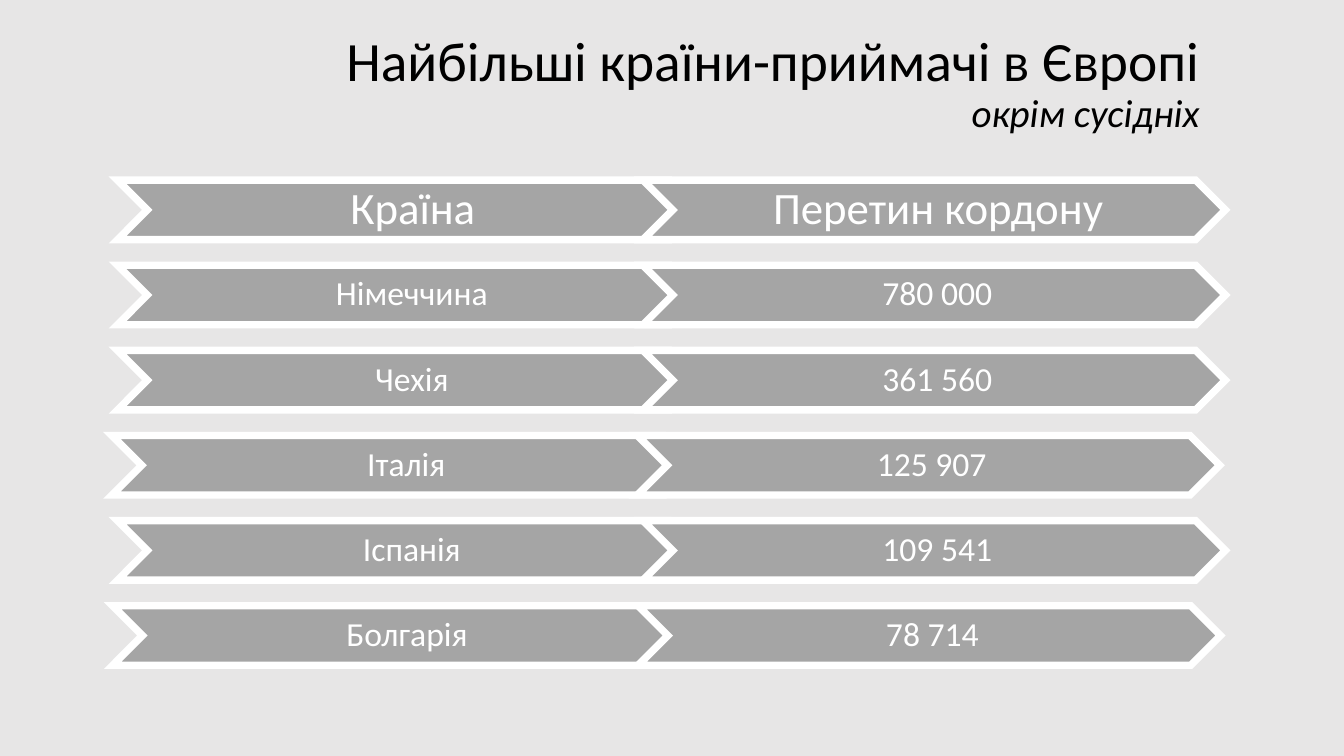
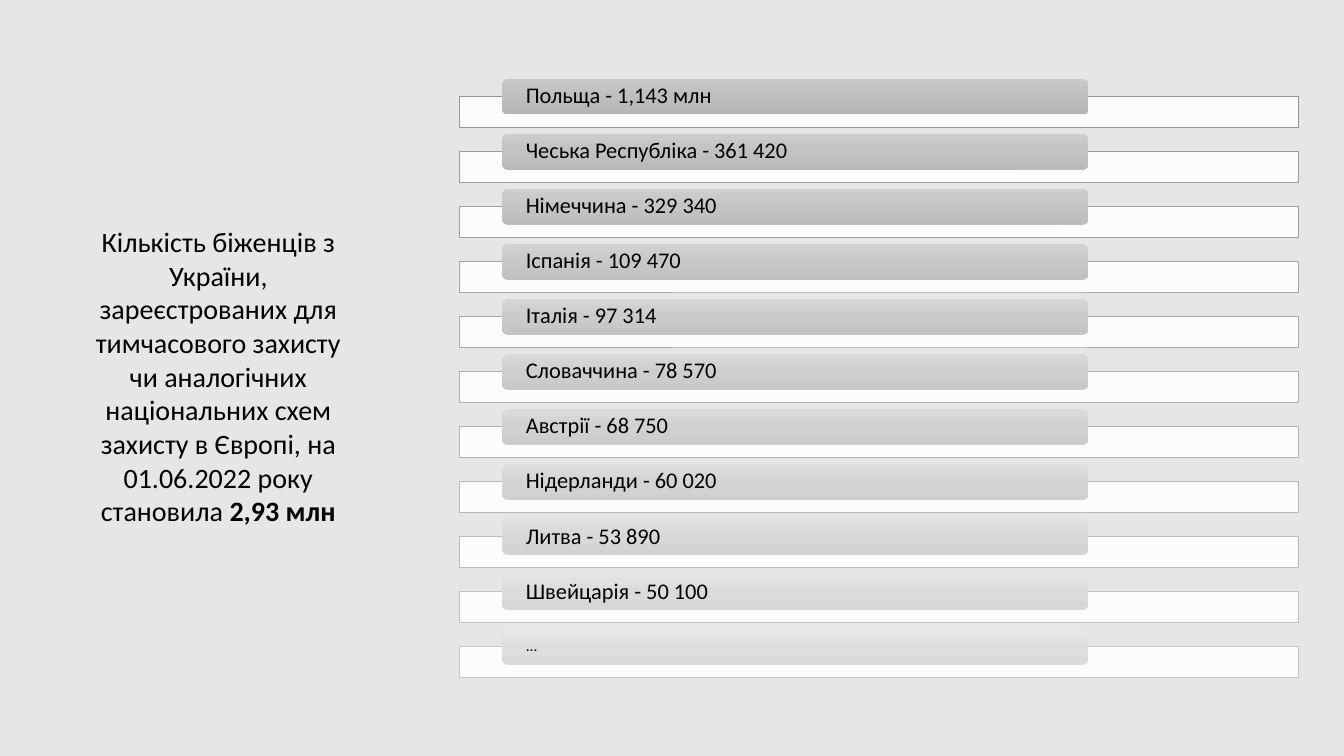
import copy

import pptx
import pptx.util
import pptx.dml.color
import pptx.enum.shapes
import pptx.enum.text
import pptx.oxml
import pptx.oxml.ns

Pt = pptx.util.Pt
RGBColor = pptx.dml.color.RGBColor
SHAPE = pptx.enum.shapes.MSO_SHAPE
ALIGN = pptx.enum.text.PP_ALIGN
ANCHOR = pptx.enum.text.MSO_ANCHOR
AUTO_SIZE = pptx.enum.text.MSO_AUTO_SIZE
qn = pptx.oxml.ns.qn

FONT = "Calibri"
BACKGROUND = RGBColor(0xE7, 0xE6, 0xE6)
BLACK = RGBColor(0, 0, 0)
WHITE = RGBColor(0xFF, 0xFF, 0xFF)
CHEVRON_GREY = RGBColor(0xA5, 0xA5, 0xA5)

TITLE = "Найбільші країни-приймачі в Європі"
SUBTITLE = "окрім сусідніх"

# country, border crossings, left edge, text size
CROSSINGS = [
    ("Країна", "Перетин кордону", 84, 32),
    ("Німеччина", "780 000", 84, 24),
    ("Чехія", "361 560", 84, 24),
    ("Італія", "125 907", 80, 24),
    ("Іспанія", "109 541", 84, 24),
    ("Болгарія", "78 714", 80.5, 24),
]
CHEVRON = {"top": 128.7, "width": 416, "height": 42.5, "step_x": 375.3, "step_y": 60.8}

SUMMARY = (
    "Кількість біженців з України, зареєстрованих для тимчасового захисту "
    "чи аналогічних національних схем захисту в Європі, на 01.06.2022 року становила "
)
SUMMARY_TOTAL = "2,93 млн"
REGISTERED = [
    "Польща - 1,143 млн",
    "Чеська Республіка - 361 420",
    "Німеччина - 329 340",
    "Іспанія - 109 470",
    "Італія - 97 314",
    "Словаччина - 78 570",
    "Австрії - 68 750",
    "Нідерланди - 60 020",
    "Литва - 53 890",
    "Швейцарія - 50 100",
    "...",
]
BAR_BOX = (328.3, 68.9, 599, 21.8)
LABEL_BOX = (358.6, 56.3, 419, 25.5)
ROW_STEP = 39.3
# grey level in the first and the last row
BAR_LINE = (150, 198)
LABEL_GRADIENT = [(0, 201, 231), (0.5, 190, 222), (1, 181, 218)]


def format_object(target, **values):
    for name, value in values.items():
        setattr(target, name, value)


def add_run(paragraph, text, size, color=BLACK, **values):
    run = paragraph.add_run()
    run.text = text
    format_object(run.font, name=FONT, size=Pt(size), **values)
    run.font.color.rgb = color


def add_plain_shape(slide, preset, box):
    shape = slide.shapes.add_shape(preset, *map(Pt, box))
    shape.shadow.inherit = False
    return shape


def label_shape(shape, text, size, color, align, margins):
    """Put one vertically centred line of text into a shape."""
    left, top, right, bottom = map(Pt, margins)
    format_object(shape.text_frame, word_wrap=True, vertical_anchor=ANCHOR.MIDDLE,
                  margin_left=left, margin_top=top, margin_right=right, margin_bottom=bottom)
    paragraph = shape.text_frame.paragraphs[0]
    format_object(paragraph, alignment=align, line_spacing=0.9)
    add_run(paragraph, text, size, color)


def blend_grey(first, last, share):
    level = round(first + (last - first) * share)
    return RGBColor(level, level, level)


def add_chevron(slide, text, left, top, size):
    box = (left, top, CHEVRON["width"], CHEVRON["height"])
    shape = add_plain_shape(slide, SHAPE.CHEVRON, box)
    shape.fill.solid()
    shape.fill.fore_color.rgb = CHEVRON_GREY
    shape.line.color.rgb = WHITE
    shape.line.width = Pt(5.25)
    outline = shape.element.spPr.find(qn("a:ln"))
    outline.append(pptx.oxml.parse_xml(
        '<a:miter xmlns:a="http://schemas.openxmlformats.org/drawingml/2006/main" lim="800000"/>'))
    margin = size / 8
    label_shape(shape, text, size, WHITE, ALIGN.CENTER,
                (size * 0.31, margin, margin, margin))


def add_bar(slide, box, line_color):
    shape = add_plain_shape(slide, SHAPE.RECTANGLE, box)
    shape.fill.solid()
    shape.fill.fore_color.rgb = WHITE
    color = shape.element.spPr.find(qn("a:solidFill"))[0]
    color.append(color.makeelement(qn("a:alpha"), {"val": "90000"}))
    shape.line.color.rgb = line_color
    shape.line.width = Pt(0.5)


def add_gradient_label(slide, box, text, share):
    shape = add_plain_shape(slide, SHAPE.ROUNDED_RECTANGLE, box)
    shape.line.fill.background()
    shape.fill.gradient()
    shape.fill.gradient_angle = 270
    stops = shape.element.spPr.find(qn("a:gradFill")).find(qn("a:gsLst"))
    stops.insert(1, copy.deepcopy(stops[0]))
    for stop, (position, first, last) in zip(shape.fill.gradient_stops, LABEL_GRADIENT):
        stop.position = position
        stop.color.rgb = blend_grey(first, last, share)
    size = 11 if text == "..." else 16
    label_shape(shape, text, size, BLACK, ALIGN.LEFT, (15.8, 0, 15.8, 0))


def build_crossings_slide(presentation):
    slide = presentation.slides.add_slide(presentation.slide_layouts.get_by_name("Title Only"))
    title = slide.shapes.title
    format_object(title, left=Pt(0), top=Pt(18.7), width=Pt(864), height=Pt(82))
    format_object(title.text_frame, vertical_anchor=ANCHOR.BOTTOM,
                  auto_size=AUTO_SIZE.NONE, word_wrap=True)
    paragraph = title.text_frame.paragraphs[0]
    format_object(paragraph, alignment=ALIGN.RIGHT, line_spacing=0.9)
    add_run(paragraph, TITLE, 39.6)
    paragraph.add_line_break()
    add_run(paragraph, SUBTITLE, 27.9, italic=True)

    for row, (country, crossings, left, size) in enumerate(CROSSINGS):
        top = CHEVRON["top"] + row * CHEVRON["step_y"]
        for column, text in enumerate((country, crossings)):
            add_chevron(slide, text, left + column * CHEVRON["step_x"], top, size)


def build_registered_slide(presentation):
    slide = presentation.slides.add_slide(presentation.slide_layouts.get_by_name("Blank"))
    for row, text in enumerate(REGISTERED):
        share = row / (len(REGISTERED) - 1)
        bar_box, label_box = (
            (left, top + row * ROW_STEP, width, height)
            for left, top, width, height in (BAR_BOX, LABEL_BOX)
        )
        add_bar(slide, bar_box, blend_grey(*BAR_LINE, share))
        add_gradient_label(slide, label_box, text, share)

    summary = slide.shapes.add_textbox(Pt(51), Pt(157), Pt(210), Pt(273.6))
    format_object(summary.text_frame, word_wrap=True, auto_size=AUTO_SIZE.SHAPE_TO_FIT_TEXT)
    paragraph = summary.text_frame.paragraphs[0]
    paragraph.alignment = ALIGN.CENTER
    add_run(paragraph, SUMMARY, 20)
    add_run(paragraph, SUMMARY_TOTAL, 20, bold=True)


def main():
    presentation = pptx.Presentation()
    format_object(presentation, slide_width=Pt(960), slide_height=Pt(540))
    background = presentation.slide_master.background.fill
    background.solid()
    background.fore_color.rgb = BACKGROUND
    build_crossings_slide(presentation)
    build_registered_slide(presentation)
    presentation.save("out.pptx")


if __name__ == "__main__":
    main()
